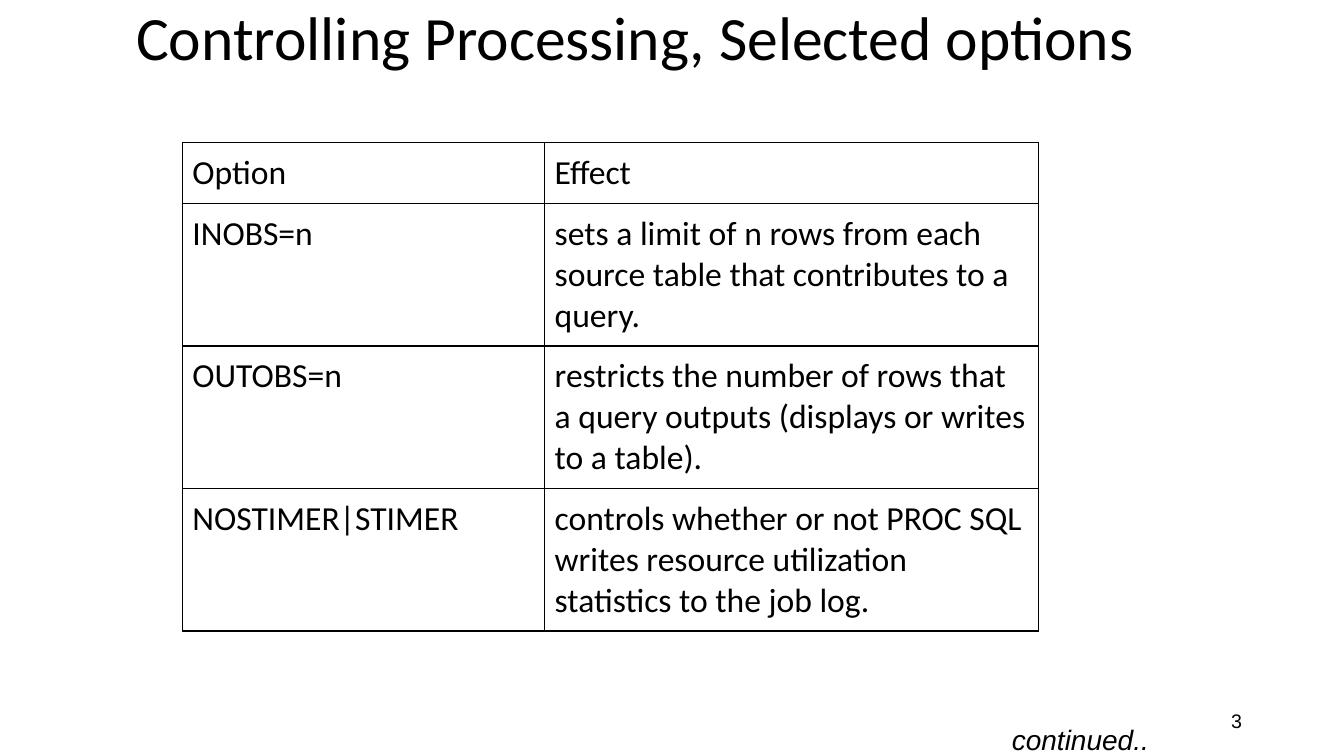
from pptx import Presentation
from pptx.util import Cm, Pt
from pptx.dml.color import RGBColor
from pptx.enum.text import MSO_ANCHOR, MSO_AUTO_SIZE, PP_ALIGN
from pptx.oxml import parse_xml
from pptx.oxml.ns import nsdecls

TOP, MIDDLE = MSO_ANCHOR.TOP, MSO_ANCHOR.MIDDLE
LEFT, RIGHT = PP_ALIGN.LEFT, PP_ALIGN.RIGHT
GROW = MSO_AUTO_SIZE.SHAPE_TO_FIT_TEXT
COLORS = {"ink": "000000", "paper": "FFFFFF"}
INSET = Cm(0.25)

ROWS = [
    ("Option", "Effect"),
    ("INOBS=n", "sets a limit of n rows from each source table "
                "that contributes to a query."),
    ("OUTOBS=n", "restricts the number of rows that a query outputs "
                 "(displays or writes to a table)."),
    ("NOSTIMER|STIMER", "controls whether or not PROC SQL writes resource "
                        "utilization statistics to the job log."),
]


def write(frame, text, size=24, font="Calibri", color="ink", italic=False,
          align=LEFT, space=1.0):
    para = frame.paragraphs[0]
    para.alignment = align
    para.line_spacing = space
    run = para.add_run()
    run.text = text
    run.font.size = Pt(size)
    run.font.name = font
    run.font.bold = False
    run.font.italic = italic
    run.font.color.rgb = RGBColor.from_string(COLORS[color])


class Page:
    def __init__(self, deck):
        self.slide = deck.slides.add_slide(deck.slide_layouts[6])
        fill = self.slide.background.fill
        fill.solid()
        fill.fore_color.rgb = RGBColor.from_string(COLORS["paper"])

    def label(self, text, left, top, width, height, anchor=MIDDLE,
              wrap=True, **style):
        box = self.slide.shapes.add_textbox(
            Cm(left), Cm(top), Cm(width), Cm(height))
        frame = box.text_frame
        frame.word_wrap = wrap
        frame.vertical_anchor = anchor
        if not wrap:
            frame.auto_size = GROW
        write(frame, text, **style)
        return frame

    def border(self, cell, width=1):
        props = cell._tc.get_or_add_tcPr()
        for i, side in enumerate(("lnL", "lnR", "lnT", "lnB")):
            props.insert(i, parse_xml(
                f'<a:{side} {nsdecls("a")} w="{Pt(width)}"><a:solidFill>'
                f'<a:srgbClr val="{COLORS["ink"]}"/></a:solidFill></a:{side}>'))

    def table(self, rows, left, top, widths, heights):
        grid = self.slide.shapes.add_table(
            len(rows), len(widths), Cm(left), Cm(top),
            Cm(sum(widths)), Cm(sum(heights))).table
        grid.first_row = grid.horz_banding = False
        for col, width in zip(grid.columns, widths):
            col.width = Cm(width)
        for r, (row, height) in enumerate(zip(rows, heights)):
            grid.rows[r].height = Cm(height)
            for c, text in enumerate(row):
                cell = grid.cell(r, c)
                cell.fill.background()
                cell.margin_left = cell.margin_right = INSET
                cell.margin_top = cell.margin_bottom = INSET
                cell.vertical_anchor = TOP
                write(cell.text_frame, text)
                self.border(cell)


def main():
    deck = Presentation()
    deck.slide_width, deck.slide_height = Cm(33.87), Cm(19.05)
    page = Page(deck)

    # Title
    page.label("Controlling Processing, Selected options",
               3.18, -0.08, 29.21, 2.21, size=44, space=0.9)

    # Page number
    page.label("3", 23.93, 17.65, 7.62, 1.02,
               size=14, font="Arial", align=RIGHT)

    # Options table
    page.table(ROWS, 4.6, 3.59, (9.13, 12.45), (1.54, 3.59, 3.59, 3.59))

    # Continuation note
    note = page.label("continued...", 25.25, 17.96, 4.14, 1.35, anchor=TOP,
                      wrap=False, size=20, font="Arial", italic=True)
    note.margin_top = note.margin_bottom = INSET

    deck.save("out.pptx")


if __name__ == "__main__":
    main()
